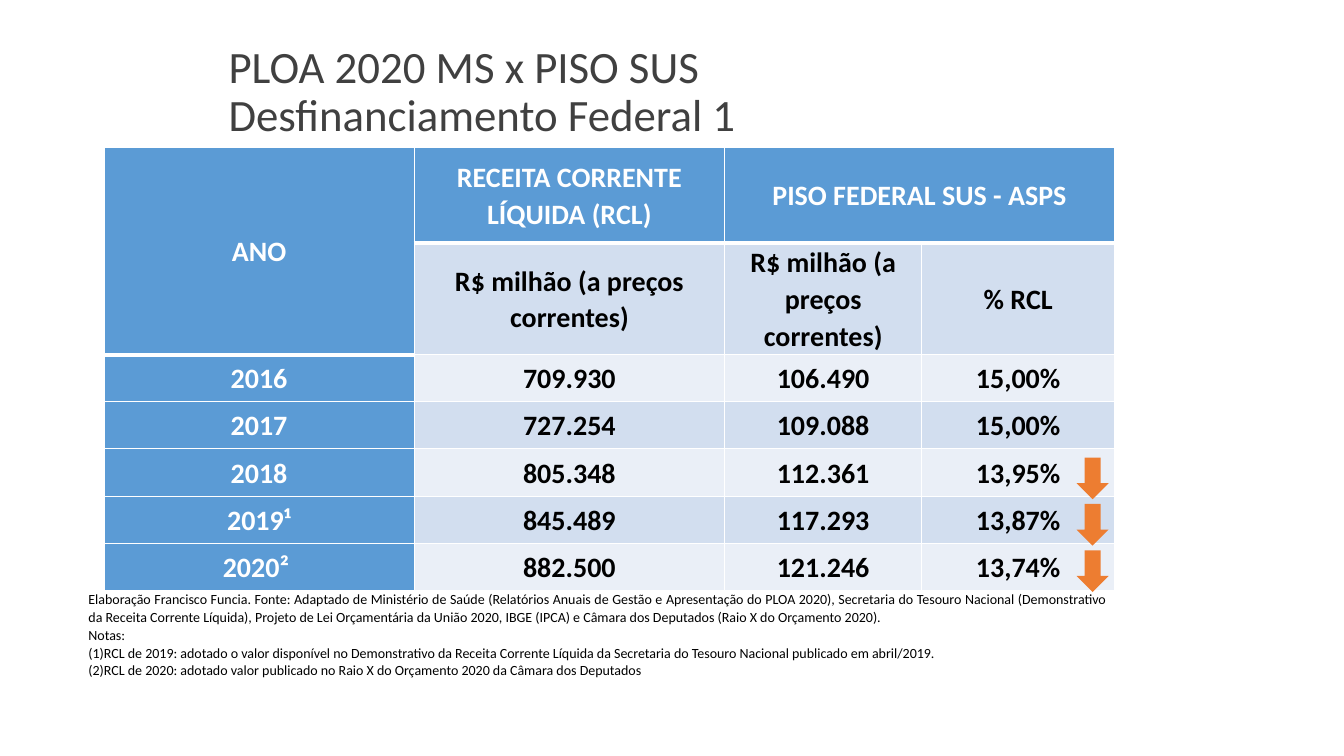
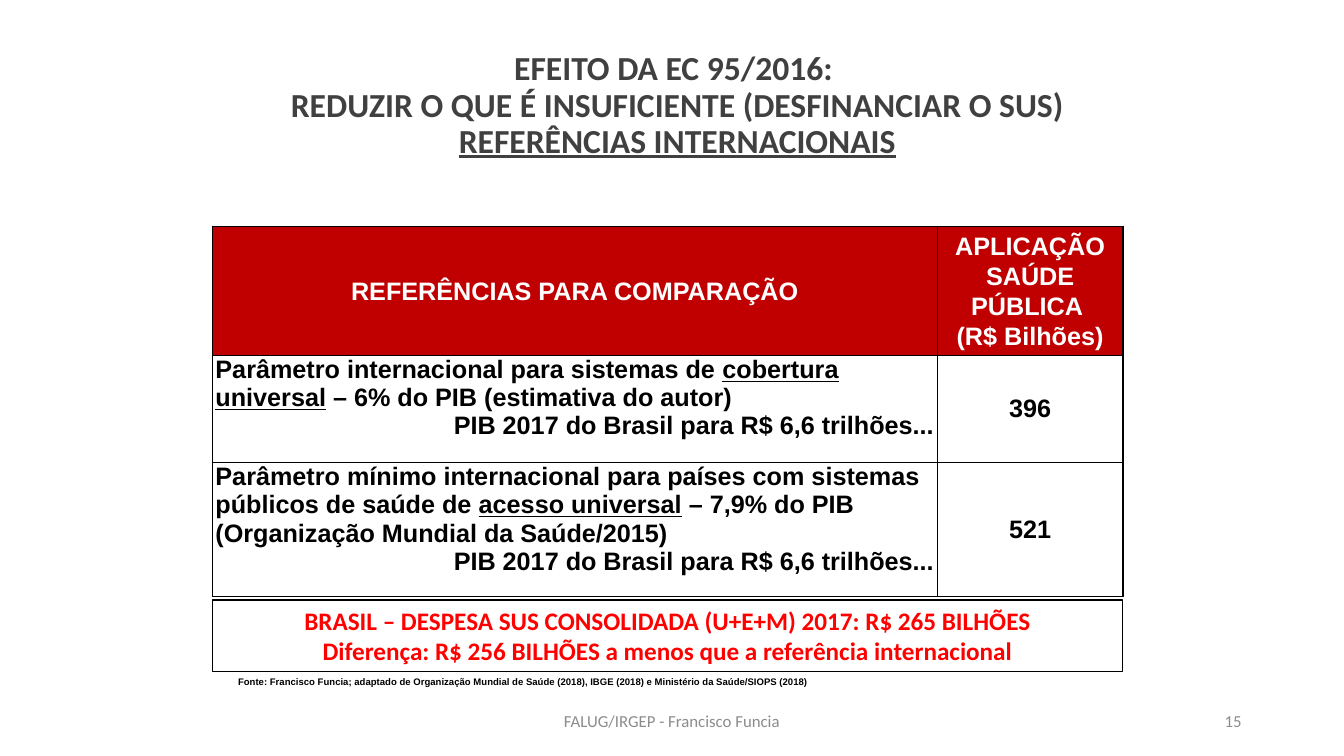
import lxml.etree as etree
import pptx
import pptx.dml.color
import pptx.enum.shapes
import pptx.enum.text
import pptx.oxml.ns
import pptx.util

Cm, Pt = pptx.util.Cm, pptx.util.Pt
RGBColor = pptx.dml.color.RGBColor
ALIGN = pptx.enum.text.PP_ALIGN
ANCHOR = pptx.enum.text.MSO_ANCHOR
FIT = pptx.enum.text.MSO_AUTO_SIZE.SHAPE_TO_FIT_TEXT
SHAPE = pptx.enum.shapes.MSO_SHAPE
qn = pptx.oxml.ns.qn

# Colours
WHITE = RGBColor(0xFF, 0xFF, 0xFF)
BLACK = RGBColor(0x00, 0x00, 0x00)
CHARCOAL = RGBColor(0x40, 0x40, 0x40)
GREY = RGBColor(0x8C, 0x8C, 0x8C)
BLUE = RGBColor(0x5B, 0x9B, 0xD5)
BAND_DARK = RGBColor(0xD2, 0xDE, 0xEF)
BAND_LIGHT = RGBColor(0xEA, 0xEF, 0xF7)
ORANGE = RGBColor(0xED, 0x7D, 0x31)
DARK_RED = RGBColor(0xC0, 0x00, 0x00)
RED = RGBColor(0xFF, 0x00, 0x00)

# Formats
CENTER = {"alignment": ALIGN.CENTER}
RIGHT = {"alignment": ALIGN.RIGHT}
LOOSE = {"line_spacing": 1.07}
MIDDLE = {"vertical_anchor": ANCHOR.MIDDLE}
UNDERLINE = {"underline": True}


def apply(obj, fmt):
    for name, value in fmt.items():
        setattr(obj, name, value)


def font(size, color=BLACK, name="Calibri", **more):
    return {"size": Pt(size), "color": color, "name": name, **more}


class Deck:
    """Holds the shared style and the current slide."""

    def __init__(self):
        self.prs = pptx.Presentation()
        apply(self.prs, {"slide_width": Cm(33.87), "slide_height": Cm(19.05)})
        self.s = None

    def slide(self):
        self.s = self.prs.slides.add_slide(self.prs.slide_layouts[6])

    def fill_text(self, tf, paras, fmt, para):
        """Each paragraph is a string, or (runs, format) with runs of (text, format)."""
        for i, item in enumerate(paras):
            runs, own = ([(item, {})], {}) if isinstance(item, str) else item
            p = tf.paragraphs[0] if i == 0 else tf.add_paragraph()
            apply(p, {**para, **own})
            for text, extra in runs:
                for n, line in enumerate(text.split("\n")):
                    if n:
                        p.add_line_break()
                    if line:
                        r = p.add_run()
                        r.text = line
                        look = {**fmt, **extra}
                        r.font.color.rgb = look.pop("color")
                        apply(r.font, look)

    def text(self, box, paras, fmt, para=None, frame=None):
        sp = self.s.shapes.add_textbox(*map(Cm, box))
        apply(sp.text_frame, {"word_wrap": True, **(frame or {})})
        self.fill_text(sp.text_frame, paras, fmt, para or {})

    def title(self, box, runs, size, **look):
        para = {"line_spacing": 0.9, "alignment": look.pop("alignment", ALIGN.LEFT)}
        self.text(box, [(runs, {})], font(size, CHARCOAL, **look), para, MIDDLE)

    def footer(self, box, words, alignment):
        self.text(box, [words], font(12, GREY), {"alignment": alignment}, MIDDLE)

    def shape(self, kind, box, fill=None, line=None):
        sp = self.s.shapes.add_shape(kind, *map(Cm, box))
        sp.shadow.inherit = False
        if fill is None:
            sp.fill.background()
        else:
            sp.fill.solid()
            sp.fill.fore_color.rgb = fill
        if line is None:
            sp.line.fill.background()
        else:
            sp.line.color.rgb = line
            sp.line.width = Pt(0.75)
        return sp

    def boxed_text(self, box, paras, fmt, line):
        tf = self.shape(SHAPE.RECTANGLE, box, line=line).text_frame
        apply(tf, {"word_wrap": True, "vertical_anchor": ANCHOR.TOP, "auto_size": FIT})
        self.fill_text(tf, paras, fmt, CENTER)

    def table(self, left, top, cols, rows):
        box = map(Cm, (left, top, sum(cols), sum(rows)))
        tbl = self.s.shapes.add_table(len(rows), len(cols), *box).table
        apply(tbl, {"first_row": False, "horz_banding": False})
        for col, width in zip(tbl.columns, cols):
            col.width = Cm(width)
        for row, height in zip(tbl.rows, rows):
            row.height = Cm(height)
        return tbl

    def cell(self, cell, paras, fmt, para, margin, border, fill=None,
             anchor=ANCHOR.MIDDLE, bottom=1):
        apply(cell, {"margin_left": Cm(margin), "margin_right": Cm(margin),
                     "margin_top": 0, "margin_bottom": 0, "vertical_anchor": anchor})
        # Borders go before the fill in the cell properties
        pr = cell._tc.get_or_add_tcPr()
        for side, width in zip("LRTB", (1, 1, 1, bottom)):
            ln = etree.SubElement(pr, qn(f"a:ln{side}"), w=str(Pt(width)))
            solid = etree.SubElement(ln, qn("a:solidFill"))
            etree.SubElement(solid, qn("a:srgbClr"), val=str(border))
        if fill is None:
            cell.fill.background()
        else:
            cell.fill.solid()
            cell.fill.fore_color.rgb = fill
        self.fill_text(cell.text_frame, paras, fmt, para)


def floor_slide(d):
    d.slide()
    d.title((5.51, 0.76, 18.64, 3.18),
            [("PLOA 2020 MS x PISO SUS\nDesfinanciamento Federal 1", {})], 32)

    # Revenue and spending floor by year; None marks a merged cell
    unit = "R$ milhão (a preços correntes)"
    data = [
        ["ANO", "RECEITA CORRENTE LÍQUIDA (RCL)", "PISO FEDERAL SUS - ASPS", None],
        [None, unit, unit, "% RCL"],
        ["2016", "709.930", "106.490", "15,00%"],
        ["2017", "727.254", "109.088", "15,00%"],
        ["2018", "805.348", "112.361", "13,95%"],
        ["2019¹", "845.489", "117.293", "13,87%"],
        ["2020² ", "882.500", "121.246", "13,74%"],
    ]
    tbl = d.table(2.62, 3.71, [7.82, 7.82, 4.97, 4.86],
                  [2.41, 2.82, 1.18, 1.18, 1.21, 1.18, 1.18])
    tbl.cell(0, 0).merge(tbl.cell(1, 0))
    tbl.cell(0, 2).merge(tbl.cell(0, 3))
    for i, row in enumerate(data):
        band = BAND_DARK if i % 2 else BAND_LIGHT
        for j, words in enumerate(row):
            head = i == 0 or j == 0
            d.cell(tbl.cell(i, j), [words] if words else [],
                   font(20, WHITE if head else BLACK, bold=True), {**CENTER, **LOOSE},
                   margin=0.13, border=WHITE, fill=BLUE if head else band,
                   bottom=1 if i else 3)

    # Source and notes
    d.text((1.98, 14.73, 26.14, 2.51), [
        "Elaboração Francisco Funcia. Fonte: Adaptado de Ministério de Saúde (Relatórios "
        "Anuais de Gestão e Apresentação do PLOA 2020), Secretaria do Tesouro Nacional "
        "(Demonstrativo da Receita Corrente Líquida), Projeto de Lei Orçamentária da União "
        "2020, IBGE (IPCA) e Câmara dos Deputados (Raio X do Orçamento 2020).",
        "Notas:",
        "(1)RCL de 2019: adotado o valor disponível no Demonstrativo da Receita Corrente "
        "Líquida da Secretaria do Tesouro Nacional publicado em abril/2019.",
        ([("(2)RCL de 2020: adotado valor publicado no Raio X do Orçamento 2020 da Câmara "
           "dos Deputados", {})], {"alignment": ALIGN.LEFT, "line_spacing": 1.0}),
    ], font(10), {"alignment": ALIGN.JUSTIFY, **LOOSE}, {"auto_size": FIT})

    # Falling share in the last three years
    for k in range(3):
        d.shape(SHAPE.DOWN_ARROW, (27.13, 11.53 + 1.17 * k, 0.81, 1.05), fill=ORANGE)


def reference_slide(d):
    d.slide()
    d.title((6.53, 0.91, 21.08, 3.53), [
        ("EFEITO DA EC 95/2016: \nREDUZIR O QUE É INSUFICIENTE (DESFINANCIAR O SUS)\n", {}),
        ("REFERÊNCIAS INTERNACIONAIS", UNDERLINE),
    ], 24, bold=True, alignment=ALIGN.CENTER)

    # International references
    gdp = ([("PIB 2017 do Brasil para R$ 6,6 trilhões...", {})], RIGHT)
    heads = [["REFERÊNCIAS PARA COMPARAÇÃO"],
             ["APLICAÇÃO SAÚDE PÚBLICA ", "(R$ Bilhões)"]]
    references = [
        ("Parâmetro internacional para sistemas de ", "cobertura universal",
         " – 6% do PIB (estimativa do autor)", "396"),
        ("Parâmetro mínimo internacional para países com sistemas públicos de saúde de ",
         "acesso universal", " – 7,9% do PIB (Organização Mundial da Saúde/2015)", "521"),
    ]
    tbl = d.table(5.35, 5.7, [18.27, 4.68], [3.25, 2.7, 3.38])
    frame = {"margin": 0.08, "border": BLACK}
    body = font(18, name="Arial", bold=True)
    for j, paras in enumerate(heads):
        d.cell(tbl.cell(0, j), paras, {**body, "color": WHITE}, {**CENTER, **LOOSE},
               fill=DARK_RED, **frame)
    for i, (start, key, end, value) in enumerate(references, 1):
        runs = [(start, {}), (key, UNDERLINE), (end, {})]
        d.cell(tbl.cell(i, 0), [(runs, {}), gdp], body, {}, anchor=ANCHOR.TOP, **frame)
        d.cell(tbl.cell(i, 1), [value], body, CENTER, **frame)

    # Conclusion and source
    d.boxed_text((5.35, 15.12, 22.95, 1.8), [
        "BRASIL – DESPESA SUS CONSOLIDADA (U+E+M) 2017: R$ 265 BILHÕES",
        "Diferença: R$ 256 BILHÕES a menos que a referência internacional",
    ], font(18, RED, bold=True), BLACK)
    d.text((5.75, 16.92, 17.6, 0.56), [
        "Fonte: Francisco Funcia; adaptado de Organização Mundial de Saúde (2018), "
        "IBGE (2018) e Ministério da Saúde/SIOPS (2018)",
    ], font(6.8, name="Arial", bold=True), frame={"auto_size": FIT})

    # Footer
    d.footer((11.22, 17.66, 11.43, 1.01), "FALUG/IRGEP - Francisco Funcia", ALIGN.CENTER)
    d.footer((23.92, 17.66, 7.62, 1.01), "15", ALIGN.RIGHT)


def main():
    d = Deck()
    floor_slide(d)
    reference_slide(d)
    d.prs.save("out.pptx")


if __name__ == "__main__":
    main()
